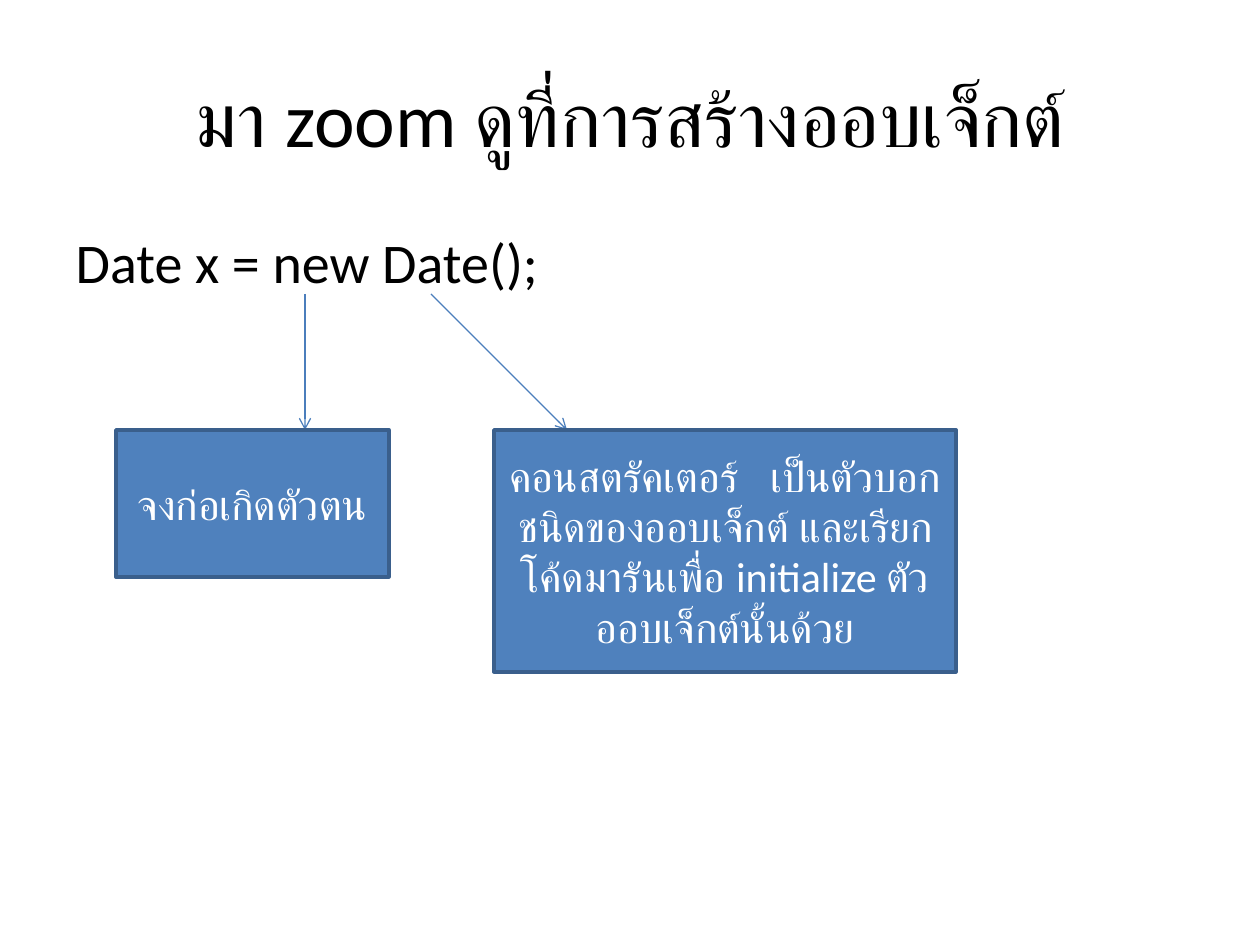
from dataclasses import dataclass

from pptx import Presentation
from pptx import util as u
from pptx.dml.color import RGBColor
from pptx.enum import lang, shapes, text
from pptx.oxml.ns import qn
from lxml import etree

PX_PER_INCH = 126


@dataclass(frozen=True)
class Theme:
    font: str = "Calibri"
    ink: str = "000000"
    paper: str = "FFFFFF"
    box: str = "4F81BD"
    border: str = "3A5F8C"
    arrow: str = "4B7EBC"
    title_size: int = 44
    code_size: int = 32
    note_size: int = 24


@dataclass(frozen=True)
class Note:
    words: str
    left: int
    top: int
    width: int
    height: int


@dataclass(frozen=True)
class Arrow:
    x1: int
    y1: int
    x2: int
    y2: int


THEME = Theme()
TITLE = "มา zoom ดูที่การสร้างออบเจ็กต์"
CODE = "Date x = new Date();"
CODE_BOTTOM, NOTE_TOP = 294, 430
NOTES = (
    Note("จงก่อเกิดตัวตน", 116, NOTE_TOP, 273, 147),
    Note("คอนสตรัคเตอร์   เป็นตัวบอกชนิดของออบเจ็กต์ และเรียกโค้ดมารันเพื่อ "
         "initialize ตัวออบเจ็กต์นั้นด้วย", 494, NOTE_TOP, 462, 242),
)
ARROWS = (
    Arrow(305, CODE_BOTTOM, 305, NOTE_TOP),
    Arrow(431, CODE_BOTTOM, 567, NOTE_TOP),
)


def px(n: int) -> int:
    return u.Inches(n / PX_PER_INCH)


def rgb(value: str) -> RGBColor:
    return RGBColor.from_string(value)


def place(sp, left: int, top: int, width: int, height: int) -> None:
    sp.left, sp.top, sp.width, sp.height = map(px, (left, top, width, height))


def write(sp, words: str, size: int, color: str, align, anchor):
    tf = sp.text_frame
    tf.word_wrap = True
    tf.vertical_anchor = anchor
    p = tf.paragraphs[0]
    p.alignment = align
    p.font.name = THEME.font
    p.font.size = u.Pt(size)
    p.font.color.rgb = rgb(color)
    r = p.add_run()
    r.text = words
    r.font.language_id = lang.MSO_LANGUAGE_ID.THAI
    return p


def draw_note(slide, note: Note) -> None:
    sp = slide.shapes.add_shape(shapes.MSO_SHAPE.RECTANGLE, 0, 0, 0, 0)
    place(sp, note.left, note.top, note.width, note.height)
    sp.shadow.inherit = False
    sp.fill.solid()
    sp.fill.fore_color.rgb = rgb(THEME.box)
    sp.line.color.rgb = rgb(THEME.border)
    sp.line.width = u.Pt(2)
    write(sp, note.words, THEME.note_size, THEME.paper,
          text.PP_ALIGN.CENTER, text.MSO_ANCHOR.MIDDLE)


def draw_arrow(slide, a: Arrow) -> None:
    cxn = slide.shapes.add_connector(
        shapes.MSO_CONNECTOR.STRAIGHT, px(a.x1), px(a.y1), px(a.x2), px(a.y2))
    cxn.line.color.rgb = rgb(THEME.arrow)
    cxn.line.width = u.Pt(0.75)
    etree.SubElement(cxn.line._get_or_add_ln(), qn("a:tailEnd"), type="arrow")
    etree.SubElement(cxn._element.spPr, qn("a:effectLst"))


def main() -> None:
    prs = Presentation()
    prs.slide_width, prs.slide_height = px(1260), px(945)
    slide = prs.slides.add_slide(prs.slide_layouts[1])

    title, body = slide.placeholders
    place(title, 63, 38, 1134, 158)
    write(title, TITLE, THEME.title_size, THEME.ink,
          text.PP_ALIGN.CENTER, text.MSO_ANCHOR.MIDDLE)
    place(body, 63, 221, 1134, 624)
    p = write(body, CODE, THEME.code_size, THEME.ink,
              text.PP_ALIGN.LEFT, text.MSO_ANCHOR.TOP)
    pPr = p._p.get_or_add_pPr()
    pPr.insert_element_before(pPr.makeelement(qn("a:buNone")), "a:tabLst", "a:defRPr")

    for arrow in ARROWS:
        draw_arrow(slide, arrow)
    for note in NOTES:
        draw_note(slide, note)
    prs.save("out.pptx")


if __name__ == "__main__":
    main()
